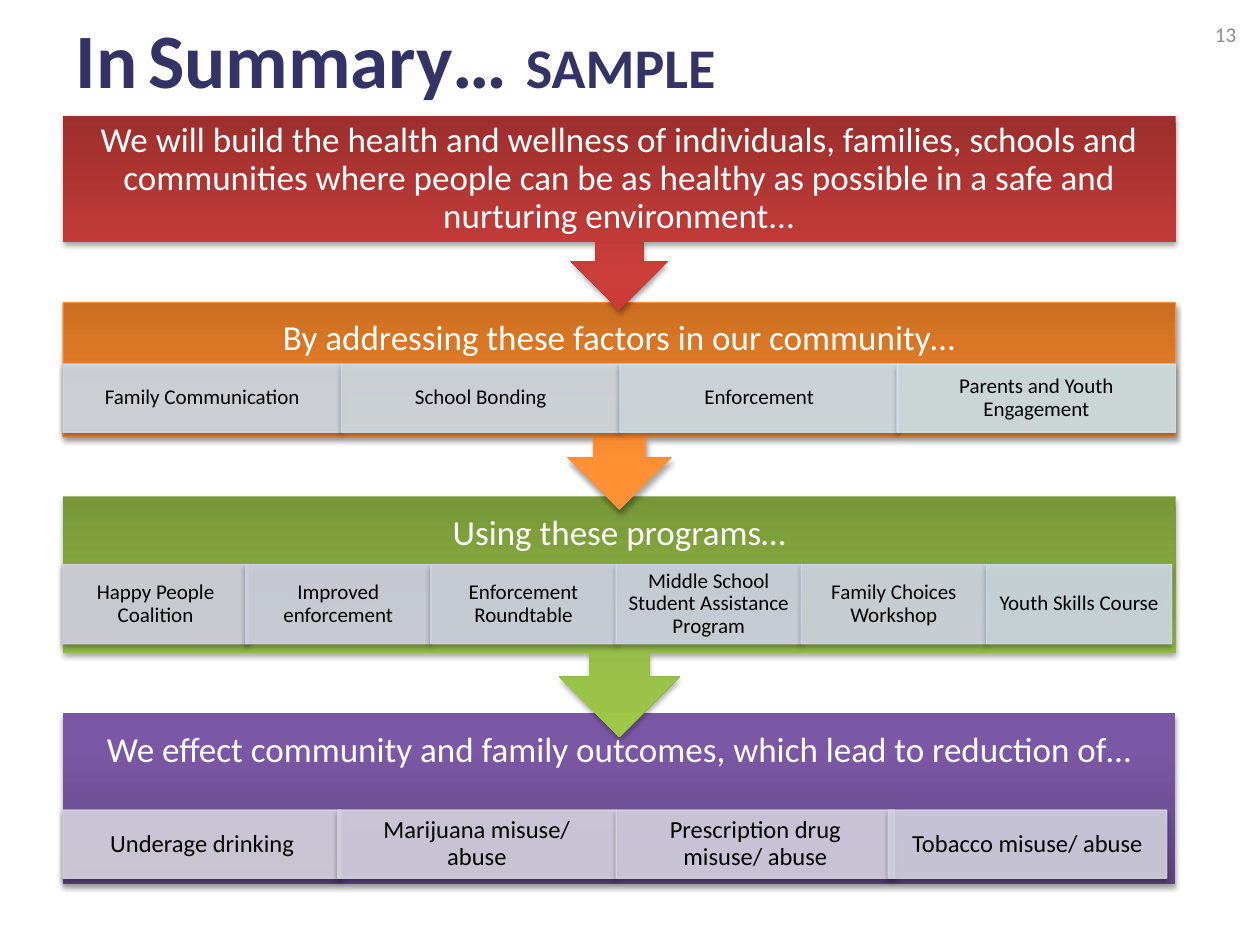
from copy import deepcopy

from lxml.etree import SubElement
from pptx import Presentation
from pptx.dml.color import RGBColor
from pptx.enum.shapes import MSO_SHAPE as Shape
from pptx.enum.text import MSO_ANCHOR as Anchor, MSO_AUTO_SIZE as AutoSize, PP_ALIGN as Align
from pptx.oxml.ns import qn
from pptx.util import Inches, Pt

FONT = "Calibri"
COLORS = {"title": "333366", "number": "8C8C8C", "heading": "FFFFFF", "tile": "000000", "orange_line": "F69240"}
LEFT, WIDTH = 0.5, 8.83

# Bands from the bottom up, so each arrow overlaps the band below it.
BANDS = [
    {
        "heading": "We effect community and family outcomes, which lead to reduction of…",
        "shape": Shape.RECTANGLE, "top": 5.66, "height": 1.36,
        "heading_height": 0.73, "anchor": Anchor.TOP,
        "gradient": ["5F4480", "7B58A6", "7C57A8"],
        "tile_top": 6.43, "tile_size": (2.21, 0.54), "font_size": 14, "inset": 0.11,
        "tiles": [
            (0.5, "Underage drinking", "D8D3E0"),
            (2.68, "Marijuana misuse/ abuse", "D7D3E1"),
            (4.89, "Prescription drug misuse/ abuse", "D6D2E2"),
            (7.05, "Tobacco misuse/ abuse", "D4D2E2"),
        ],
    },
    {
        "heading": "Using these programs…",
        "shape": Shape.UP_ARROW_CALLOUT, "top": 3.94, "height": 1.91,
        "heading_height": 0.67, "anchor": Anchor.TOP,
        "gradient": ["779737", "9BC348", "9DC746"],
        "tile_top": 4.48, "tile_size": (1.47, 0.63), "font_size": 12, "inset": 0.09,
        "tiles": [
            (0.5, "Happy People Coalition", "D3D2E3"),
            (1.95, "Improved enforcement", "D1D2E4"),
            (3.42, "Enforcement Roundtable", "D1D4E5"),
            (4.89, "Middle School\nStudent Assistance Program", "D1D5E6"),
            (6.36, "Family Choices Workshop", "D1D7E6"),
            (7.83, "Youth Skills Course", "D0D9E7"),
        ],
    },
    {
        "heading": "By addressing these factors in our community…",
        "shape": Shape.UP_ARROW_CALLOUT, "top": 2.4, "height": 1.64,
        "heading_height": 0.58, "anchor": Anchor.MIDDLE,
        "gradient": ["CC6E20", "FF9034", "FF9136"], "line": COLORS["orange_line"],
        "tile_top": 2.89, "tile_size": (2.21, 0.54), "font_size": 12, "inset": 0.09,
        "tiles": [
            (0.5, "Family Communication", "D0DBE8"),
            (2.71, "School Bonding", "D0DDE9"),
            (4.92, "Enforcement", "D0E0EA"),
            (7.12, "Parents and Youth Engagement", "D0E3EA"),
        ],
    },
    {
        "heading": "We will build the health and wellness of individuals, families, schools and "
                   "communities where people can be as healthy as possible in a safe and "
                   "nurturing environment...",
        "shape": Shape.UP_ARROW_CALLOUT, "top": 0.92, "height": 1.54,
        "heading_height": 1, "anchor": Anchor.MIDDLE,
        "gradient": ["9C2F2D", "CB3E3A", "CE3B37"],
        "tiles": [],
    },
]


def add_shadow(shape):
    shape.shadow.inherit = False
    effects = shape._element.spPr.find(qn("a:effectLst"))
    shadow = SubElement(effects, qn("a:outerShdw"), blurRad=str(Pt(3.1)), dist=str(Pt(1.8)),
                        dir="5400000", rotWithShape="0")
    color = SubElement(shadow, qn("a:srgbClr"), val="000000")
    SubElement(color, qn("a:alpha"), val="35000")


def write_text(shape, text, size, color, align, anchor, insets):
    """Fill a shape with uniformly formatted text; insets are (side, top and bottom)."""
    frame = shape.text_frame
    frame.word_wrap = True
    frame.vertical_anchor = anchor
    frame.margin_left = frame.margin_right = Inches(insets[0])
    frame.margin_top = frame.margin_bottom = Inches(insets[1])
    frame.text = text
    for paragraph in frame.paragraphs:
        paragraph.alignment = align
        paragraph.line_spacing = 0.9
        font = paragraph.runs[0].font
        font.name, font.size = FONT, Pt(size)
        font.color.rgb = RGBColor.from_string(color)


presentation = Presentation()
presentation.slide_width, presentation.slide_height = Inches(10), Inches(7.5)
slide = presentation.slides.add_slide(presentation.slide_layouts[5])

number = slide.shapes.add_textbox(Inches(7.58), Inches(0.08), Inches(2.33), Inches(0.4))
write_text(number, "13", 12, COLORS["number"], Align.RIGHT, Anchor.MIDDLE, (0.1, 0.05))

title = slide.shapes.title
title.left, title.top, title.width, title.height = Inches(0.5), Inches(0), Inches(8.5), Inches(0.92)
title.text_frame.auto_size = AutoSize.NONE
title.text_frame.vertical_anchor = Anchor.MIDDLE
title_line = title.text_frame.paragraphs[0]
title_line.alignment = Align.LEFT
for text, size, bold in [("In", 44, True), (" ", 27, False), ("Summary… ", 44, True), ("SAMPLE", 32, True)]:
    run = title_line.add_run()
    run.text = text
    run.font.name, run.font.size, run.font.bold = FONT, Pt(size), bold
    run.font.color.rgb = RGBColor.from_string(COLORS["title"])

for band in BANDS:
    shape = slide.shapes.add_shape(band["shape"], Inches(LEFT), Inches(band["top"]),
                                   Inches(WIDTH), Inches(band["height"]))
    if band["shape"] == Shape.UP_ARROW_CALLOUT:
        shape.rotation = 180
    shape.fill.gradient()
    shape.fill.gradient_angle = 90
    stop_list = shape._element.spPr.find(qn("a:gradFill")).find(qn("a:gsLst"))
    stop_list.append(deepcopy(stop_list[-1]))
    for stop, position, color in zip(shape.fill.gradient_stops, (0, 0.8, 1), band["gradient"]):
        stop.position = position
        stop.color.rgb = RGBColor.from_string(color)
    if "line" in band:
        shape.line.color.rgb = RGBColor.from_string(band["line"])
        shape.line.width = Pt(0.75)
    else:
        shape.line.fill.background()
    add_shadow(shape)

    heading = slide.shapes.add_textbox(Inches(LEFT), Inches(band["top"]),
                                       Inches(WIDTH), Inches(band["heading_height"]))
    write_text(heading, band["heading"], 20, COLORS["heading"], Align.CENTER, band["anchor"], (0.16, 0.16))

    for left, text, color in band["tiles"]:
        width, height = band["tile_size"]
        tile = slide.shapes.add_shape(Shape.RECTANGLE, Inches(left), Inches(band["tile_top"]),
                                      Inches(width), Inches(height))
        tile.fill.solid()
        tile.fill.fore_color.rgb = RGBColor.from_string(color)
        tile.line.color.rgb = RGBColor.from_string(color)
        tile.line.width = Pt(0.75)
        for color_element in tile._element.spPr.iter(qn("a:srgbClr")):
            SubElement(color_element, qn("a:alpha"), val="90000")
        add_shadow(tile)
        write_text(tile, text, band["font_size"], COLORS["tile"], Align.CENTER, Anchor.MIDDLE,
                   (band["inset"], 0.02))

presentation.save("out.pptx")
